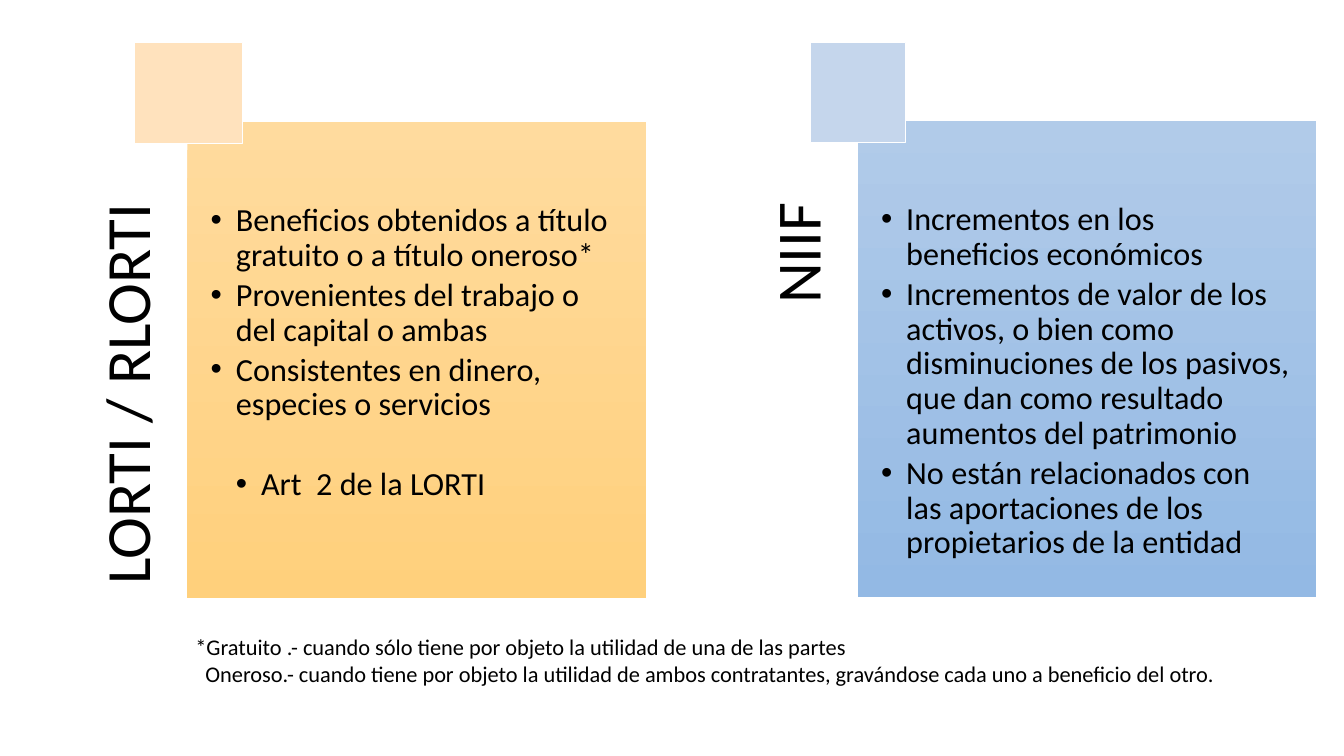
"""Build a slide comparing the LORTI and NIIF views of income."""
from dataclasses import dataclass

from lxml.etree import SubElement
from pptx import Presentation
from pptx.dml.color import RGBColor
from pptx.enum.shapes import MSO_SHAPE
from pptx.enum.text import MSO_ANCHOR, PP_ALIGN
from pptx.oxml.ns import qn
from pptx.util import Pt

FONT = "Calibri"
BLACK = "000000"
WHITE = "FFFFFF"
INDENT = 18
PANEL_W, PANEL_H = 327.6, 339.8
TITLE_W, TITLE_H = 339.8, 65.5
TOP_INSET, SIDE_INSET = 58.3, 16.6


@dataclass(frozen=True)
class Box:
    left: float
    top: float
    width: float
    height: float


@dataclass(frozen=True)
class Bullet:
    text: str
    level: int = 1
    space_before: float = 0


@dataclass(frozen=True)
class Panel:
    title: str
    left: float
    top: float
    gradient: tuple[str, str]
    corner: Box
    corner_fill: str
    bullets: tuple[Bullet, ...]


PANELS = (
    Panel("LORTI / RLORTI", 133.9, 87.1, ("FFDB9E", "FFD07C"),
          Box(95.9, 30.2, 77.4, 72), "FFE2BD", (
              Bullet("Beneficios obtenidos a título gratuito o a título oneroso*"),
              Bullet("Provenientes del trabajo o del capital o ambas"),
              Bullet("Consistentes en dinero, especies o servicios"),
              Bullet("Art  2 de la LORTI", 2, 28.4))),
    Panel("NIIF", 612.7, 86.4, ("B1CBE9", "93B9E4"),
          Box(579, 30.2, 68, 71.3), "C5D6EC", (
              Bullet("Incrementos en los beneficios económicos"),
              Bullet("Incrementos de valor de los activos, o bien como disminuciones "
                     "de los pasivos, que dan como resultado aumentos del patrimonio"),
              Bullet("No están relacionados con las aportaciones de los "
                     "propietarios de la entidad"))),
)

NOTES = (
    ("*Gratuito .- cuando sólo tiene por objeto la utilidad de una de las partes", 0),
    ("Oneroso.- cuando tiene por objeto la utilidad de ambos contratantes, "
     "gravándose cada uno a beneficio del otro.", 7.2),
)


def color(value: str) -> RGBColor:
    return RGBColor.from_string(value)


def place(box: Box) -> tuple:
    return Pt(box.left), Pt(box.top), Pt(box.width), Pt(box.height)


def add_rect(s, box: Box):
    sp = s.shapes.add_shape(MSO_SHAPE.RECTANGLE, *place(box))
    sp.shadow.inherit = False
    return sp


def set_frame(tf, left: float, top: float, right: float, bottom: float) -> None:
    tf.word_wrap = True
    tf.vertical_anchor = MSO_ANCHOR.TOP
    tf.margin_left, tf.margin_top = Pt(left), Pt(top)
    tf.margin_right, tf.margin_bottom = Pt(right), Pt(bottom)


def next_paragraph(tf, index: int):
    return tf.add_paragraph() if index else tf.paragraphs[0]


def add_run(p, text: str, size: float) -> None:
    r = p.add_run()
    r.text = text
    r.font.name, r.font.size = FONT, Pt(size)
    r.font.color.rgb = color(BLACK)


def set_indent(p, left: float, first: float = 0):
    pPr = p._p.get_or_add_pPr()
    pPr.set("marL", str(Pt(left)))
    pPr.set("indent", str(Pt(first)))
    return pPr


def add_bullet(p, bullet: Bullet) -> None:
    pPr = set_indent(p, INDENT * bullet.level, -INDENT)
    SubElement(pPr, qn("a:buFont")).set("typeface", "Arial")
    SubElement(pPr, qn("a:buChar")).set("char", "•")
    p.level = bullet.level
    p.alignment = PP_ALIGN.LEFT
    p.line_spacing = 0.9
    p.space_before, p.space_after = Pt(bullet.space_before), Pt(3.8)
    add_run(p, bullet.text, 23)


def add_title(s, panel: Panel) -> None:
    center_x = panel.left - TITLE_H / 2
    center_y = panel.top + PANEL_H / 2
    box = Box(center_x - TITLE_W / 2, center_y - TITLE_H / 2, TITLE_W, TITLE_H)
    sp = s.shapes.add_textbox(*place(box))
    sp.rotation = 270
    set_frame(sp.text_frame, 0, 0, TOP_INSET, 0)
    p = sp.text_frame.paragraphs[0]
    p.alignment = PP_ALIGN.RIGHT
    p.line_spacing = 0.9
    add_run(p, panel.title, 45)


def add_panel(s, panel: Panel) -> None:
    add_title(s, panel)
    sp = add_rect(s, Box(panel.left, panel.top, PANEL_W, PANEL_H))
    sp.line.fill.background()
    sp.fill.gradient()
    sp.fill.gradient_angle = 270
    for stop, value in zip(sp.fill.gradient_stops, panel.gradient):
        stop.color.rgb = color(value)
    tf = sp.text_frame
    set_frame(tf, SIDE_INSET, TOP_INSET, SIDE_INSET, SIDE_INSET)
    for i, bullet in enumerate(panel.bullets):
        add_bullet(next_paragraph(tf, i), bullet)

    corner = add_rect(s, panel.corner)
    corner.fill.solid()
    corner.fill.fore_color.rgb = color(panel.corner_fill)
    corner.line.color.rgb = color(WHITE)
    corner.line.width = Pt(0.5)


def add_notes(s) -> None:
    sp = s.shapes.add_textbox(*place(Box(132.5, 448.6, 782.6, 46)))
    tf = sp.text_frame
    set_frame(tf, 7.2, 3.6, 7.2, 3.6)
    for i, (text, left) in enumerate(NOTES):
        p = next_paragraph(tf, i)
        set_indent(p, left)
        add_run(p, text, 16)


def main() -> None:
    prs = Presentation()
    prs.slide_width, prs.slide_height = Pt(960), Pt(540)
    s = prs.slides.add_slide(prs.slide_layouts[6])
    for panel in PANELS:
        add_panel(s, panel)
    add_notes(s)
    prs.save("out.pptx")


if __name__ == "__main__":
    main()
